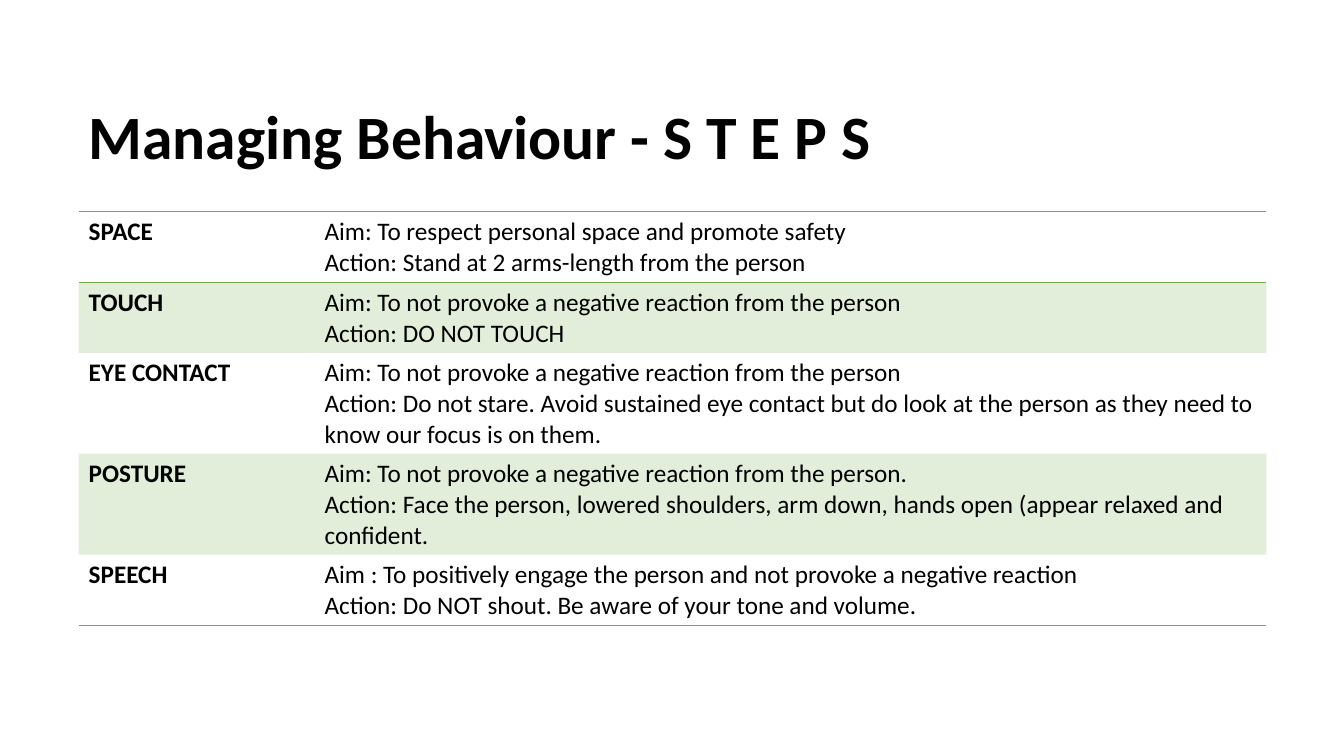
import pptx
import pptx.dml.color
import pptx.enum.text
import pptx.oxml.ns
import pptx.util
from lxml import etree
from pptx.util import Inches

FONT = "Calibri"
BLACK = "000000"
GREEN = "70AD47"
NO_STYLE_NO_GRID = "{2D5ABB26-0587-4C30-8999-92F81FD0307C}"
COLUMN_WIDTHS = (2.34, 9.44)

# Heading, aim, action, row height in inches
STEPS = [
    ("SPACE",
     "Aim: To respect personal space and promote safety",
     "Action: Stand at 2 arms-length from the person", 0.7),
    ("TOUCH",
     "Aim: To not provoke a negative reaction from the person",
     "Action: DO NOT TOUCH", 0.7),
    ("EYE CONTACT",
     "Aim: To not provoke a negative reaction from the person",
     "Action: Do not stare. Avoid sustained eye contact but do look at the "
     "person as they need to know our focus is on them.", 1.0),
    ("POSTURE",
     "Aim: To not provoke a negative reaction from the person.",
     "Action: Face the person, lowered shoulders, arm down, hands open "
     "(appear relaxed and confident.", 1.0),
    ("SPEECH",
     "Aim : To positively engage the person and not provoke a negative reaction",
     "Action: Do NOT shout. Be aware of your tone and volume.", 0.7),
]


def rgb(color):
    return pptx.dml.color.RGBColor.from_string(color)


def add_child(parent, tag, **attributes):
    return etree.SubElement(parent, pptx.oxml.ns.qn(tag), **attributes)


def write_paragraphs(text_frame, lines, size, bold):
    text_frame.text = "\n".join(lines)
    for paragraph in text_frame.paragraphs:
        paragraph.font.name = FONT
        paragraph.font.size = pptx.util.Pt(size)
        paragraph.font.bold = bold
        paragraph.font.color.rgb = rgb(BLACK)


def add_title(slide, text):
    box = slide.shapes.add_textbox(Inches(0.78), Inches(0.92), Inches(11.64), Inches(0.84))
    box.text_frame.word_wrap = True
    box.text_frame.auto_size = pptx.enum.text.MSO_AUTO_SIZE.SHAPE_TO_FIT_TEXT
    write_paragraphs(box.text_frame, [text], 44, True)


def add_border(cell, tag):
    line = add_child(cell._tc.get_or_add_tcPr(), tag, w=str(pptx.util.Pt(1)))
    add_child(add_child(line, "a:solidFill"), "a:srgbClr", val=GREEN)


def tint(cell):
    """Fill the cell with green at 20% opacity."""
    cell.fill.solid()
    cell.fill.fore_color.rgb = rgb(GREEN)
    color = cell._tc.tcPr.find(".//" + pptx.oxml.ns.qn("a:srgbClr"))
    add_child(color, "a:alpha", val="20000")


def style_cell(cell, row_index):
    """Rule the first row above and below and the last below; band odd rows."""
    if row_index == 0:
        add_border(cell, "a:lnT")
    if row_index in (0, len(STEPS) - 1):
        add_border(cell, "a:lnB")
    if row_index % 2:
        tint(cell)
    else:
        cell.fill.background()


def add_steps_table(slide):
    height = sum(step[3] for step in STEPS)
    table = slide.shapes.add_table(
        len(STEPS), len(COLUMN_WIDTHS), Inches(0.78), Inches(2.1),
        Inches(sum(COLUMN_WIDTHS)), Inches(height)).table
    table.first_row = False
    table.horz_banding = False
    table._tbl.tblPr.find(pptx.oxml.ns.qn("a:tableStyleId")).text = NO_STYLE_NO_GRID
    for column, width in zip(table.columns, COLUMN_WIDTHS):
        column.width = Inches(width)
    for row_index, (heading, aim, action, row_height) in enumerate(STEPS):
        row = table.rows[row_index]
        row.height = Inches(row_height)
        write_paragraphs(row.cells[0].text_frame, [heading], 18, True)
        write_paragraphs(row.cells[1].text_frame, [aim, action], 18, False)
        for cell in row.cells:
            style_cell(cell, row_index)


def main():
    presentation = pptx.Presentation()
    presentation.slide_width = Inches(13.33)
    presentation.slide_height = Inches(7.5)
    slide = presentation.slides.add_slide(presentation.slide_layouts[6])
    add_title(slide, "Managing Behaviour - S T E P S")
    add_steps_table(slide)
    presentation.save("out.pptx")


if __name__ == "__main__":
    main()
